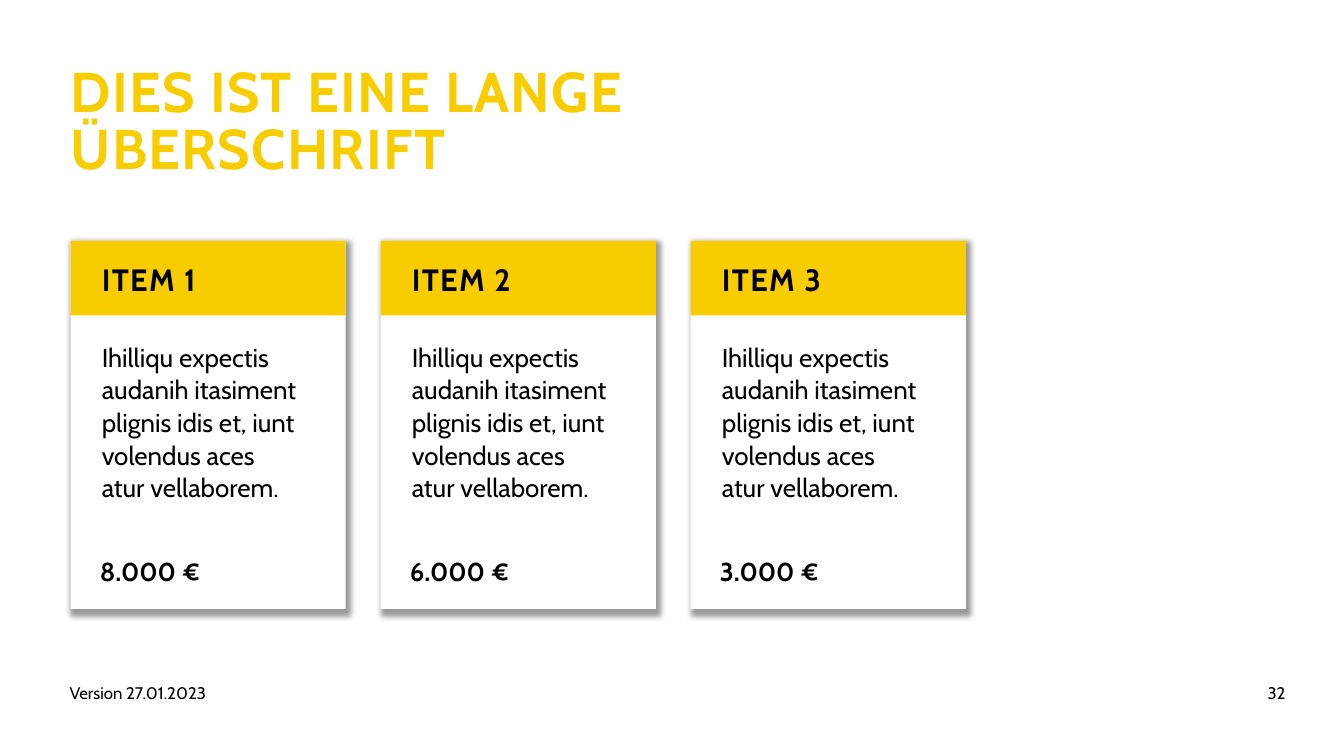
import pptx
import pptx.dml.color
import pptx.enum.shapes
import pptx.enum.text
import pptx.oxml
import pptx.oxml.ns
import pptx.util

Inches, Pt = pptx.util.Inches, pptx.util.Pt
ANCHOR = pptx.enum.text.MSO_ANCHOR
ALIGN = pptx.enum.text.PP_ALIGN
RECTANGLE = pptx.enum.shapes.MSO_SHAPE.RECTANGLE
YELLOW = pptx.dml.color.RGBColor(0xF7, 0xCD, 0x00)
BLACK = pptx.dml.color.RGBColor(0, 0, 0)
WHITE = pptx.dml.color.RGBColor(255, 255, 255)

LEFT, CARD_TOP = 0.7, 2.39
CARD_WIDTH, CARD_HEIGHT, HEADER_HEIGHT = 2.73, 3.65, 0.74
COLUMN_STEP = 3.075
DESCRIPTION = [
    "Ihilliqu expectis audanih itasiment plignis idis et, iunt volendus aces",
    "atur vellaborem.",
]
ITEMS = [("ITEM 1", "8.000 €"), ("ITEM 2", "6.000 €"), ("ITEM 3", "3.000 €")]
CARD_SHADOW = (
    f'<a:effectLst {pptx.oxml.ns.nsdecls("a")}>'
    '<a:outerShdw blurRad="50800" dist="0" dir="0" sx="102000" sy="102000" '
    'algn="tl" rotWithShape="0"><a:srgbClr val="000000">'
    '<a:alpha val="40000"/></a:srgbClr></a:outerShdw></a:effectLst>'
)


def write(shape, lines, size, color=BLACK, bold=False, line_spacing=1.0,
          letter_spacing=0, insets=(0, 0, 0, 0), anchor=ANCHOR.TOP, align=ALIGN.LEFT):
    """Fill the shape with one paragraph per line; insets run left, top, right, bottom."""
    frame = shape.text_frame
    frame.word_wrap = True
    frame.auto_size = pptx.enum.text.MSO_AUTO_SIZE.NONE
    frame.vertical_anchor = anchor
    (frame.margin_left, frame.margin_top,
     frame.margin_right, frame.margin_bottom) = map(Inches, insets)
    frame.text = "\n".join(lines)
    for paragraph in frame.paragraphs:
        paragraph.alignment = align
        paragraph.line_spacing = line_spacing
        font = paragraph.font
        font.name, font.size, font.bold = "Cabin", Pt(size), bold
        font.color.rgb = color
        if letter_spacing:
            for run in paragraph.runs:
                run._r.get_or_add_rPr().set("spc", str(letter_spacing * 100))


def add_panel(left, height, color):
    panel = slide.shapes.add_shape(RECTANGLE, Inches(left), Inches(CARD_TOP),
                                   Inches(CARD_WIDTH), Inches(height))
    panel.shadow.inherit = False
    panel.fill.solid()
    panel.fill.fore_color.rgb = color
    panel.line.fill.background()
    return panel


presentation = pptx.Presentation()
presentation.slide_width, presentation.slide_height = Inches(13.33), Inches(7.5)
slide = presentation.slides.add_slide(presentation.slide_layouts[5])

headline = slide.shapes.title
headline.left, headline.top = Inches(LEFT), Inches(0.66)
headline.width, headline.height = Inches(8.2), Inches(1.12)
write(headline, ["DIES IST EINE LANGE ÜBERSCHRIFT"], 40, YELLOW, bold=True,
      line_spacing=0.85, letter_spacing=1)

for left, width, text, align in [
    (0.69, 8.23, "Version 27.01.2023", ALIGN.LEFT),
    (10.6, 2.15, "32", ALIGN.RIGHT),
]:
    footer = slide.shapes.add_textbox(Inches(left), Inches(6.77), Inches(width), Inches(0.4))
    write(footer, [text], 12, align=align)

for column, (item, amount) in enumerate(ITEMS):
    left = LEFT + column * COLUMN_STEP

    card = add_panel(left, CARD_HEIGHT, WHITE)
    properties = card._element.spPr
    properties.remove(properties.find(pptx.oxml.ns.qn("a:effectLst")))
    properties.append(pptx.oxml.parse_xml(CARD_SHADOW))
    write(card, DESCRIPTION, 18.5, line_spacing=1.05, insets=(0.31, 0.98, 0.28, 0.6))

    header = add_panel(left, HEADER_HEIGHT, YELLOW)
    write(header, [item], 22, bold=True, line_spacing=1.05, letter_spacing=1,
          insets=(0.31, 0.12, 0.12, 0.12), anchor=ANCHOR.MIDDLE)

    price = slide.shapes.add_textbox(Inches(left + 0.29), Inches(5.5),
                                     Inches(2.21), Inches(0.26))
    write(price, [amount], 18.5, bold=True, line_spacing=1.05)

presentation.save("out.pptx")
